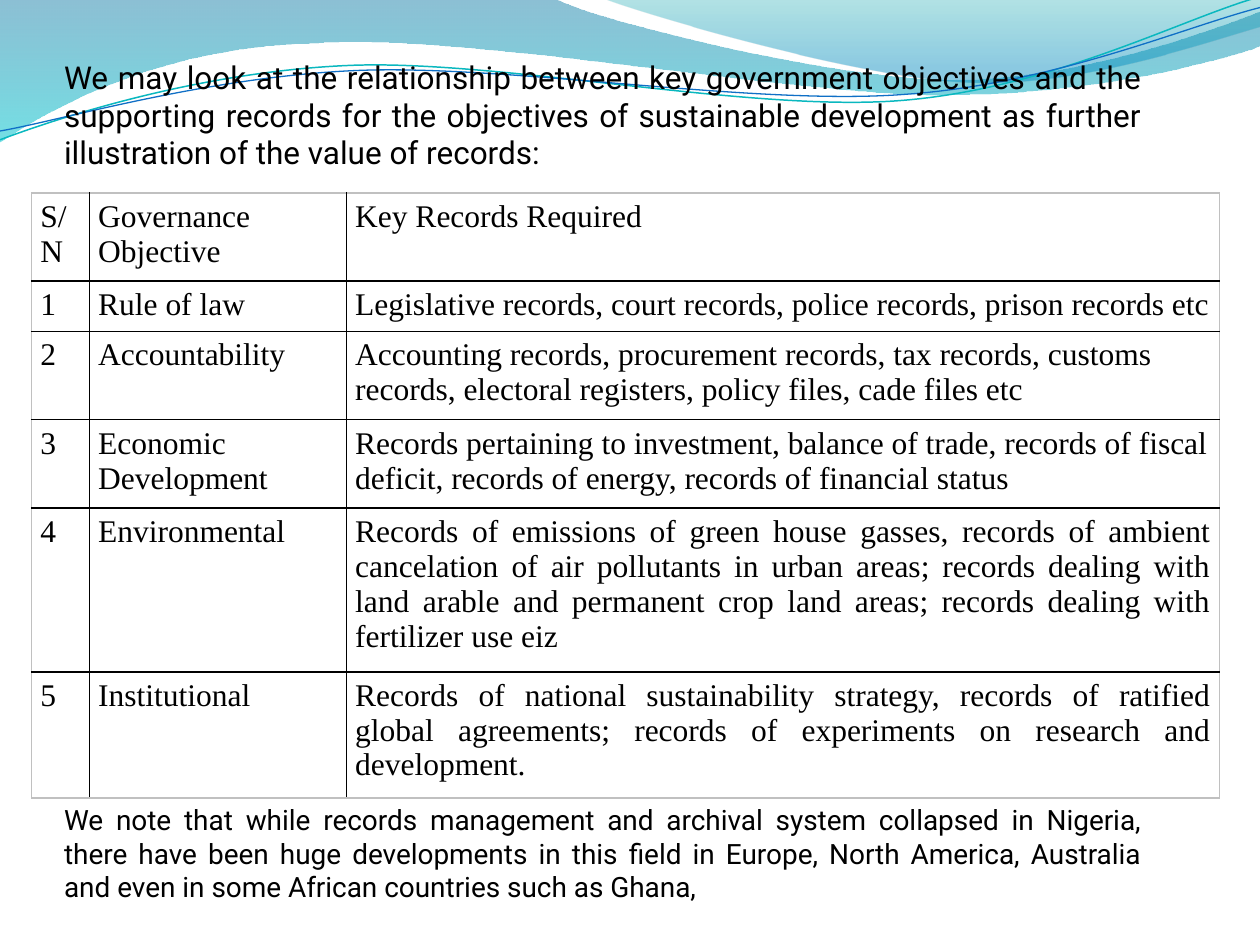
from dataclasses import dataclass

from lxml.etree import SubElement
from pptx import Presentation
from pptx.dml.color import RGBColor
from pptx.enum.text import PP_ALIGN
from pptx.oxml.ns import qn
from pptx.util import Inches, Pt


@dataclass(frozen=True)
class Theme:
    ink: str = "000000"
    outer_border: str = "C0C0C0"
    teal_line: str = "0AB8BF"
    blue_line: str = "0F6FC6"
    # Gradient stops: position, colour, opacity in percent
    wide_wave: tuple = ((0, "0074A1", 45), (1, "00C6CF", 55))
    right_wave: tuple = ((0, "00A1A9", 30), (0.8, "008BBF", 45))
    body_font: str = "Roboto"
    table_font: str = "Times New Roman"
    intro_size: int = 18
    closing_size: int = 16
    table_size: int = 18
    border_width: int = 1


THEME = Theme()

# Outlines in inches: a pair is a straight step, six numbers are a Bezier curve
UNITS_PER_INCH = 100
WIDE_WAVE = [
    (0, 0), (4.4, -0.01),
    (4.76, 0.17, 6.64, 0.63, 7.58, 0.63), (8.53, 0.63, 9.58, 0.26, 10, 0.09),
    (10.01, 0.36),
    (9.83, 0.44, 8.7, 0.76, 7.46, 0.75), (6.22, 0.75, 3.82, 0.28, 2.57, 0.34),
    (1.29, 0.36, 0.46, 0.83, -0.01, 1.13),
]
RIGHT_WAVE = [
    (4.79, -0.01),
    (5.09, 0.11, 6.82, 0.62, 7.69, 0.65), (8.56, 0.69, 9.61, 0.32, 10, 0.21),
    (10, 0),
]
TEAL_CURVE = [
    (0, 1.11),
    (0.48, 0.93, 1.58, 0.57, 2.77, 0.52), (3.95, 0.47, 5.93, 0.89, 7.13, 0.8),
    (8.33, 0.71, 9.38, 0.15, 9.98, -0.02),
]
BLUE_CURVE = [
    (0, 1.04),
    (0.47, 0.96, 1.64, 0.61, 2.83, 0.56), (4.03, 0.51, 5.97, 0.84, 7.17, 0.75),
    (8.36, 0.67, 9.41, 0.21, 10, 0.06),
]

INTRO = (
    "We may look at the relationship between key government objectives and the "
    "supporting records for the objectives of sustainable development as further "
    "illustration of the value of records:"
)
CLOSING = (
    "We note that while records management and archival system collapsed in Nigeria, "
    "there have been huge developments in this field in Europe, North America, "
    "Australia and even in some African countries such as Ghana,"
)

COLUMN_WIDTHS = (0.46, 2.04, 6.93)
ROW_HEIGHTS = (0.59, 0.34, 0.59, 0.59, 1.09, 0.84)
FIRST_JUSTIFIED_ROW = 4
RECORDS = [
    ("S/N", "Governance Objective", "Key Records Required"),
    ("1", "Rule of law",
     "Legislative records, court records, police records, prison records etc"),
    ("2", "Accountability",
     "Accounting records, procurement records, tax records, customs records, "
     "electoral registers, policy files, cade files etc"),
    ("3", "Economic Development",
     "Records pertaining to investment, balance of trade, records of fiscal deficit, "
     "records of energy, records of financial status"),
    ("4", "Environmental",
     "Records of emissions of green house gasses, records of ambient cancelation of "
     "air pollutants in urban areas; records dealing with land arable and permanent "
     "crop land areas; records dealing with fertilizer use eiz"),
    ("5", "Institutional",
     "Records of national sustainability strategy, records of ratified global "
     "agreements; records of experiments on research and development."),
]


def add_outline(slide, outline, close):
    """Build the outline from its anchors, then bend the curved steps."""
    steps = [[round(value * UNITS_PER_INCH) for value in step] for step in outline]
    start, *anchors = [step[-2:] for step in steps]
    builder = slide.shapes.build_freeform(*start, scale=Inches(1) / UNITS_PER_INCH)
    builder.add_line_segments(anchors, close=close)
    shape = builder.convert_to_shape()
    shape.shadow.inherit = False

    left = min(x for x, _ in [start, *anchors])
    top = min(y for _, y in [start, *anchors])
    segments = list(shape._element.iter(qn("a:lnTo")))
    for segment, step in zip(segments, steps[1:]):
        if len(step) == 6:
            curve = SubElement(segment.getparent(), qn("a:cubicBezTo"))
            for x, y in zip(step[::2], step[1::2]):
                SubElement(curve, qn("a:pt"), x=str(x - left), y=str(y - top))
            segment.getparent().replace(segment, curve)
    return shape


def add_wave(slide, outline, stops):
    wave = add_outline(slide, outline, close=True)
    wave.line.fill.background()
    wave.fill.gradient()
    wave.fill.gradient_angle = 270
    for stop, (position, color, _) in zip(wave.fill.gradient_stops, stops):
        stop.position = position
        stop.color.rgb = RGBColor.from_string(color)
    for color_element, (_, _, opacity) in zip(wave._element.iter(qn("a:srgbClr")), stops):
        SubElement(color_element, qn("a:alpha"), val=str(opacity * 1000))


def add_curve(slide, outline, color, width):
    curve = add_outline(slide, outline, close=False)
    curve.fill.background()
    curve.line.color.rgb = RGBColor.from_string(color)
    curve.line.width = Pt(width)


def style_paragraph(paragraph, font, size, justified):
    paragraph.font.name = font
    paragraph.font.size = Pt(size)
    paragraph.font.color.rgb = RGBColor.from_string(THEME.ink)
    paragraph.alignment = PP_ALIGN.JUSTIFY if justified else PP_ALIGN.LEFT


def add_statement(slide, text, top, size):
    frame = slide.shapes.add_textbox(
        Inches(0.41), Inches(top), Inches(8.75), Inches(1)).text_frame
    frame.word_wrap = True
    frame.text = text
    style_paragraph(frame.paragraphs[0], THEME.body_font, size, justified=True)


def add_borders(cell, row, column):
    outer_sides = {
        "a:lnL": column == 0,
        "a:lnR": column == len(COLUMN_WIDTHS) - 1,
        "a:lnT": row == 0,
        "a:lnB": row == len(ROW_HEIGHTS) - 1,
    }
    properties = cell._tc.get_or_add_tcPr()
    for index, (side, is_outer) in enumerate(outer_sides.items()):
        border = SubElement(properties, qn(side), w=str(Pt(THEME.border_width)))
        properties.insert(index, border)
        SubElement(SubElement(border, qn("a:solidFill")), qn("a:srgbClr"),
                   val=THEME.outer_border if is_outer else THEME.ink)


def fill_cell(cell, text, justified):
    cell.text = text
    cell.margin_left = cell.margin_right = Inches(0.07)
    cell.margin_top = cell.margin_bottom = Inches(0.05)
    cell.fill.background()
    style_paragraph(cell.text_frame.paragraphs[0], THEME.table_font,
                    THEME.table_size, justified)


def add_records_table(slide):
    table = slide.shapes.add_table(
        len(ROW_HEIGHTS), len(COLUMN_WIDTHS), Inches(0.25), Inches(1.53),
        Inches(sum(COLUMN_WIDTHS)), Inches(sum(ROW_HEIGHTS))).table
    table.first_row = table.horz_banding = False
    for column, width in zip(table.columns, COLUMN_WIDTHS):
        column.width = Inches(width)
    for row, (height, texts) in enumerate(zip(ROW_HEIGHTS, RECORDS)):
        table.rows[row].height = Inches(height)
        for column, text in enumerate(texts):
            cell = table.cell(row, column)
            fill_cell(cell, text, justified=row >= FIRST_JUSTIFIED_ROW)
            add_borders(cell, row, column)


def main():
    presentation = Presentation()
    presentation.slide_width, presentation.slide_height = Inches(10), Inches(7.5)
    slide = presentation.slides.add_slide(presentation.slide_layouts[6])
    add_wave(slide, WIDE_WAVE, THEME.wide_wave)
    add_wave(slide, RIGHT_WAVE, THEME.right_wave)
    add_curve(slide, TEAL_CURVE, THEME.teal_line, 0.85)
    add_curve(slide, BLUE_CURVE, THEME.blue_line, 0.75)
    add_statement(slide, INTRO, 0.41, THEME.intro_size)
    add_records_table(slide)
    add_statement(slide, CLOSING, 6.32, THEME.closing_size)
    presentation.save("out.pptx")


if __name__ == "__main__":
    main()
